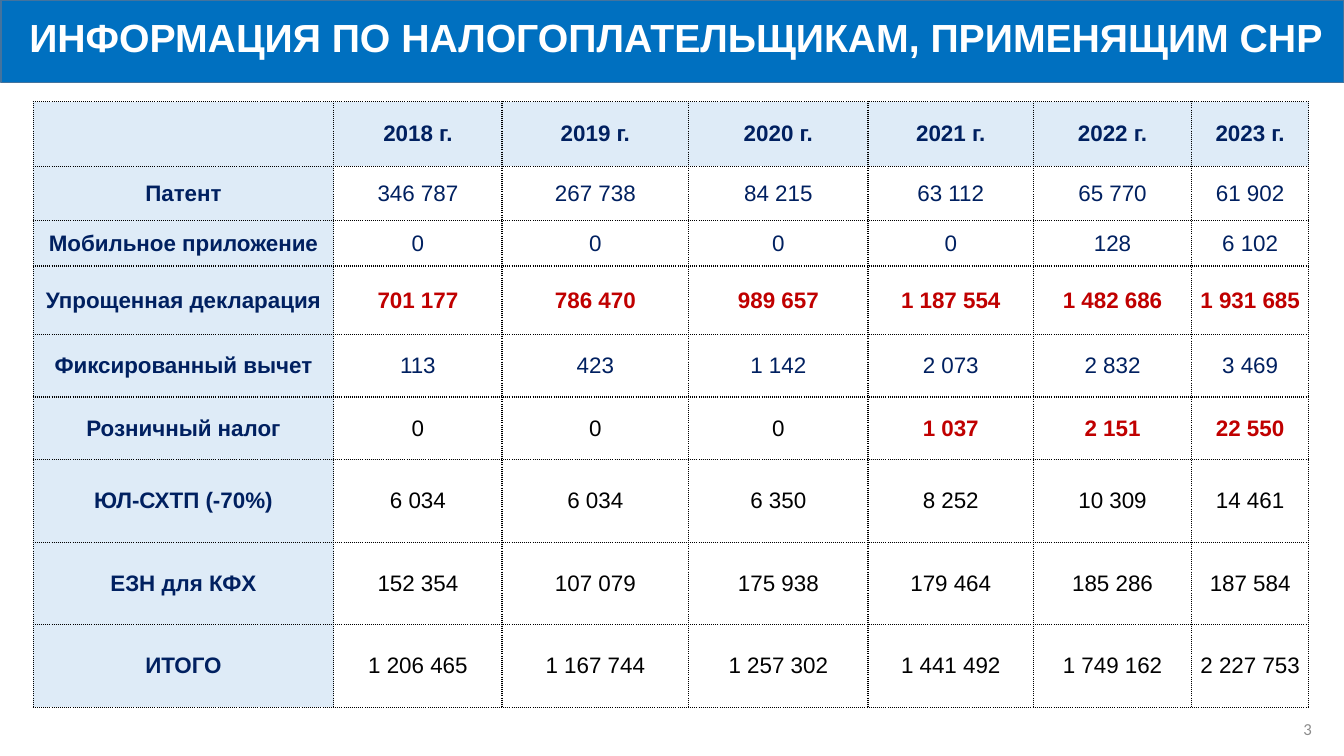
from lxml.etree import SubElement
from pptx import Presentation
from pptx.dml.color import RGBColor
from pptx.enum.shapes import MSO_SHAPE
from pptx.enum.text import MSO_ANCHOR, MSO_AUTO_SIZE, PP_ALIGN
from pptx.oxml.ns import qn
from pptx.util import Inches, Pt


class Theme:
    blue = RGBColor.from_string("0070C0")
    edge = RGBColor.from_string("43739E")
    pale = RGBColor.from_string("DEEBF7")
    navy = RGBColor.from_string("002060")
    red = RGBColor.from_string("C00000")
    gray = RGBColor.from_string("8C8C8C")
    white = RGBColor.from_string("FFFFFF")
    black = RGBColor.from_string("000000")
    head, body, note = Pt(28), Pt(16), Pt(12)
    sans, foot = "Arial", "Calibri"


def style(frame, text, size, color, align, bold=False, face=Theme.sans):
    frame.text = text
    para = frame.paragraphs[0]
    para.alignment = align
    for run in para.runs:
        font = run.font
        font.name, font.size, font.bold = face, size, bold
        font.color.rgb = color


def border(cell):
    props = cell._tc.get_or_add_tcPr()
    for spot, side in enumerate(("lnL", "lnR", "lnT", "lnB")):
        line = SubElement(props, qn(f"a:{side}"), w=str(Pt(1)))
        fill = SubElement(line, qn("a:solidFill"))
        SubElement(fill, qn("a:srgbClr"), val=str(Theme.black))
        SubElement(line, qn("a:prstDash"), val="sysDot")
        props.insert(spot, line)


deck = Presentation()
deck.slide_width, deck.slide_height = Inches(13.33), Inches(7.5)
slide = deck.slides.add_slide(deck.slide_layouts[5])
shapes = slide.shapes

title = shapes.title
title.left, title.top = Inches(0), Inches(0.08)
title.width, title.height = Inches(13.32), Inches(0.62)
frame = title.text_frame
frame.auto_size = MSO_AUTO_SIZE.NONE
frame.vertical_anchor = MSO_ANCHOR.MIDDLE
frame.margin_left = Inches(0.29)
style(frame, "ИНФОРМАЦИЯ ПО НАЛОГОПЛАТЕЛЬЩИКАМ, ПРИМЕНЯЩИМ СНР",
      Theme.head, Theme.white, PP_ALIGN.LEFT, True)
frame.paragraphs[0].line_spacing = 0.9

banner = shapes.add_shape(MSO_SHAPE.RECTANGLE, Inches(0.01), Inches(0),
                          Inches(13.32), Inches(0.82))
banner.shadow.inherit = False
banner.fill.solid()
banner.fill.fore_color.rgb = Theme.blue
banner.line.color.rgb = Theme.edge
banner.line.width = Pt(1)
title.element.addprevious(banner.element)

data = [
    ["", "2018 г.", "2019 г.", "2020 г.", "2021 г.", "2022 г.", "2023 г."],
    ["Патент", "346 787", "267 738", "84 215", "63 112", "65 770", "61 902"],
    ["Мобильное приложение", "0", "0", "0", "0", "128", "6 102"],
    ["Упрощенная декларация", "701 177", "786 470", "989 657",
     "1 187 554", "1 482 686", "1 931 685"],
    ["Фиксированный вычет", "113", "423", "1 142", "2 073", "2 832", "3 469"],
    ["Розничный налог", "0", "0", "0", "1 037", "2 151", "22 550"],
    ["ЮЛ-СХТП (-70%)", "6 034", "6 034", "6 350", "8 252", "10 309", "14 461"],
    ["ЕЗН для КФХ", "152 354", "107 079", "175 938",
     "179 464", "185 286", "187 584"],
    ["ИТОГО", "1 206 465", "1 167 744", "1 257 302",
     "1 441 492", "1 749 162", "2 227 753"],
]
widths = [2.98, 1.67, 1.85, 1.78, 1.64, 1.57, 1.16]
heights = [0.64, 0.54, 0.45, 0.68, 0.62, 0.62, 0.82, 0.82, 0.82]

table = shapes.add_table(len(data), len(widths), Inches(0.33), Inches(1.01),
                         Inches(12.65), Inches(6.02)).table
for col, width in zip(table.columns, widths):
    col.width = Inches(width)
for row, height in zip(table.rows, heights):
    row.height = Inches(height)

for r, row in enumerate(data):
    for c, text in enumerate(row):
        cell = table.cell(r, c)
        label = r == 0 or c == 0
        hot = not label and (r == 3 or r == 5 and c >= 4)
        color = Theme.red if hot else Theme.navy if label or r < 5 else Theme.black
        cell.margin_left = cell.margin_right = Inches(0)
        cell.margin_top = cell.margin_bottom = Inches(0)
        cell.vertical_anchor = MSO_ANCHOR.MIDDLE
        cell.fill.solid()
        cell.fill.fore_color.rgb = Theme.pale if label else Theme.white
        style(cell.text_frame, text, Theme.body, color, PP_ALIGN.CENTER, label or hot)
        border(cell)

number = shapes.add_textbox(Inches(10.11), Inches(7.03), Inches(3), Inches(0.4))
number.text_frame.word_wrap = True
number.text_frame.vertical_anchor = MSO_ANCHOR.MIDDLE
style(number.text_frame, "3", Theme.note, Theme.gray, PP_ALIGN.RIGHT, face=Theme.foot)

deck.save("out.pptx")
